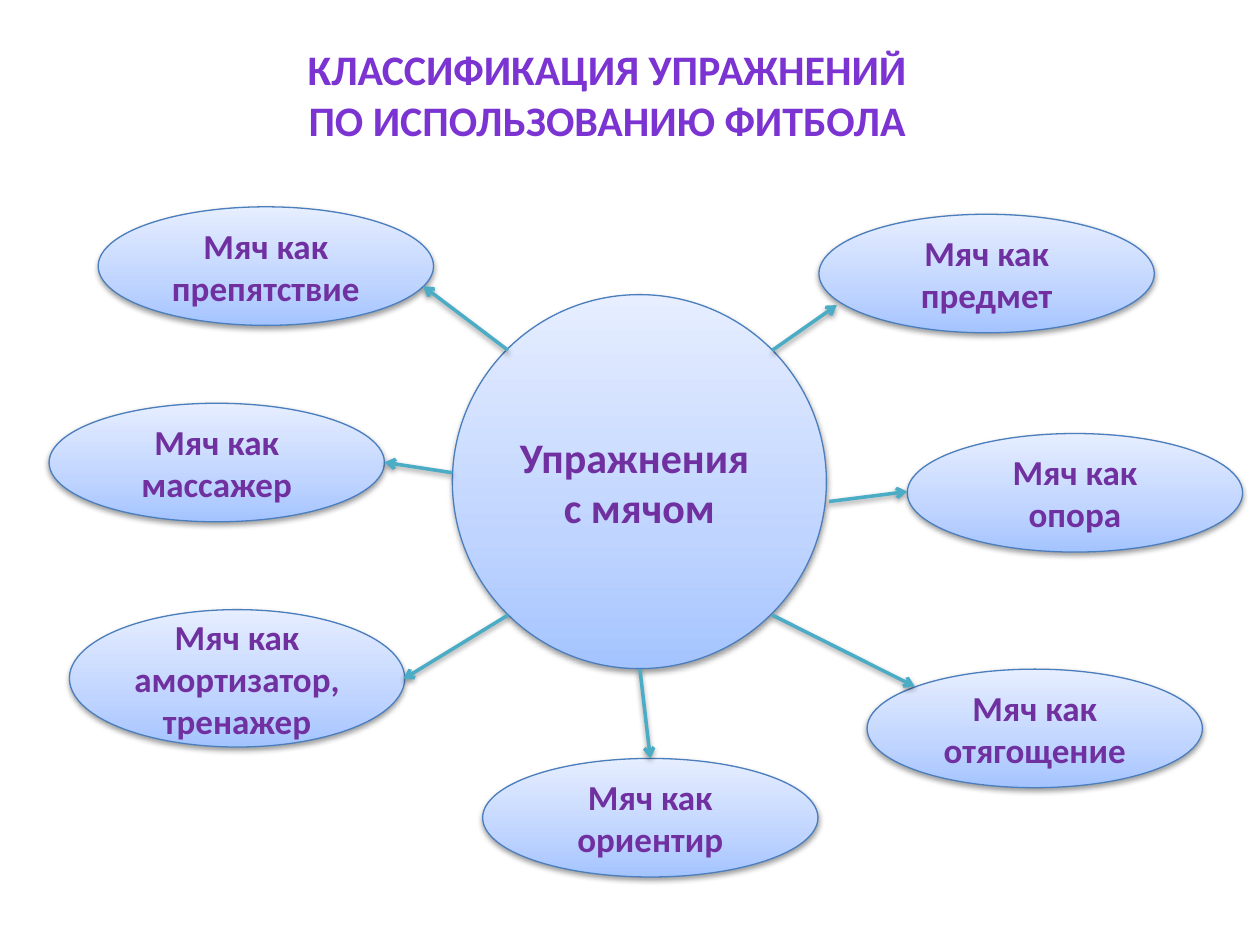
"""Build a slide that classifies fitball exercises around a central circle."""
from copy import deepcopy

from pptx import Presentation, oxml, util as u
from pptx.dml import color
from pptx.enum import shapes, text
from pptx.oxml import ns

rgb = color.RGBColor.from_string
GRADIENT = [(0, "A4C4FF"), (0.35, "BFD4FF"), (1, "E6EEFF")]
SHADOW = (
    f'<a:effectLst {ns.nsdecls("a")}>'
    '<a:outerShdw blurRad="40000" dist="20000" dir="5400000" rotWithShape="0">'
    '<a:srgbClr val="000000"><a:alpha val="38000"/></a:srgbClr>'
    '</a:outerShdw></a:effectLst>'
)


def write_lines(frame, lines, size, hue):
    """Fill a text frame with centred bold paragraphs."""
    frame.text = "\n".join(lines)
    frame.vertical_anchor = text.MSO_ANCHOR.MIDDLE
    for para in frame.paragraphs:
        para.alignment = text.PP_ALIGN.CENTER
        para.font.name = "Calibri"
        para.font.size = u.Pt(size)
        para.font.bold = True
        para.font.color.rgb = rgb(hue)


def add_bubble(page, lines, size, *place):
    """Add a shaded ellipse with text at left, top, width, height in cm."""
    bubble = page.shapes.add_shape(shapes.MSO_SHAPE.OVAL, *map(u.Cm, place))
    bubble.fill.gradient()
    bubble.fill.gradient_angle = 90
    stop_list = bubble._element.spPr.find(".//" + ns.qn("a:gsLst"))
    stop_list.insert(1, deepcopy(stop_list[0]))
    for stop, (position, hue) in zip(bubble.fill.gradient_stops, GRADIENT):
        stop.position = position
        stop.color.rgb = rgb(hue)
    bubble.line.color.rgb = rgb("4B7EBC")
    bubble.line.width = u.Pt(0.75)
    bubble._element.spPr.append(oxml.parse_xml(SHADOW))
    bubble.text_frame.word_wrap = True
    write_lines(bubble.text_frame, lines, size, "7030A0")


deck = Presentation()
deck.slide_width, deck.slide_height = u.Cm(25.4), u.Cm(19.05)
page = deck.slides.add_slide(deck.slide_layouts[5])

title = page.shapes.title
title.left, title.top, title.width, title.height = map(u.Cm, (5.89, 0.74, 12.7, 2.31))
title.text_frame.word_wrap = False
title.text_frame.auto_size = text.MSO_AUTO_SIZE.NONE
title_lines = ["КЛАССИФИКАЦИЯ УПРАЖНЕНИЙ", "ПО ИСПОЛЬЗОВАНИЮ ФИТБОЛА"]
write_lines(title.text_frame, title_lines, 24, "7B34D2")

add_bubble(page, ["Упражнения ", "с мячом"], 24, 9.12, 5.94, 7.54, 7.54)

roles = [
    ("опора", (18.29, 8.74), 2.39, (16.71, 10.11, 18.29, 9.91)),
    ("массажер", (0.99, 8.13), 2.39, (9.12, 9.53, 7.75, 9.32)),
    ("амортизатор, тренажер", (1.4, 12.29), 2.77, (10.24, 12.4, 8.13, 13.69)),
    ("ориентир", (9.73, 15.29), 2.39, (12.9, 13.49, 13.11, 15.29)),
    ("отягощение", (17.48, 13.49), 2.39, (15.57, 12.4, 18.44, 13.84)),
    ("препятствие", (1.98, 4.17), 2.39, (10.24, 7.06, 8.53, 5.77)),
    ("предмет", (16.51, 4.32), 2.39, (15.57, 7.06, 16.87, 6.15)),
]
for role, corner, height, ends in roles:
    add_bubble(page, [f"Мяч как {role}"], 20, *corner, 6.76, height)
    arrow = page.shapes.add_connector(shapes.MSO_CONNECTOR.STRAIGHT, *map(u.Cm, ends))
    arrow.line.color.rgb = rgb("4BACC6")
    arrow.line.width = u.Pt(2)
    head = oxml.parse_xml(f'<a:tailEnd {ns.nsdecls("a")} type="arrow"/>')
    arrow.line._get_or_add_ln().append(head)
    arrow._element.spPr.append(oxml.parse_xml(SHADOW))

deck.save("out.pptx")
